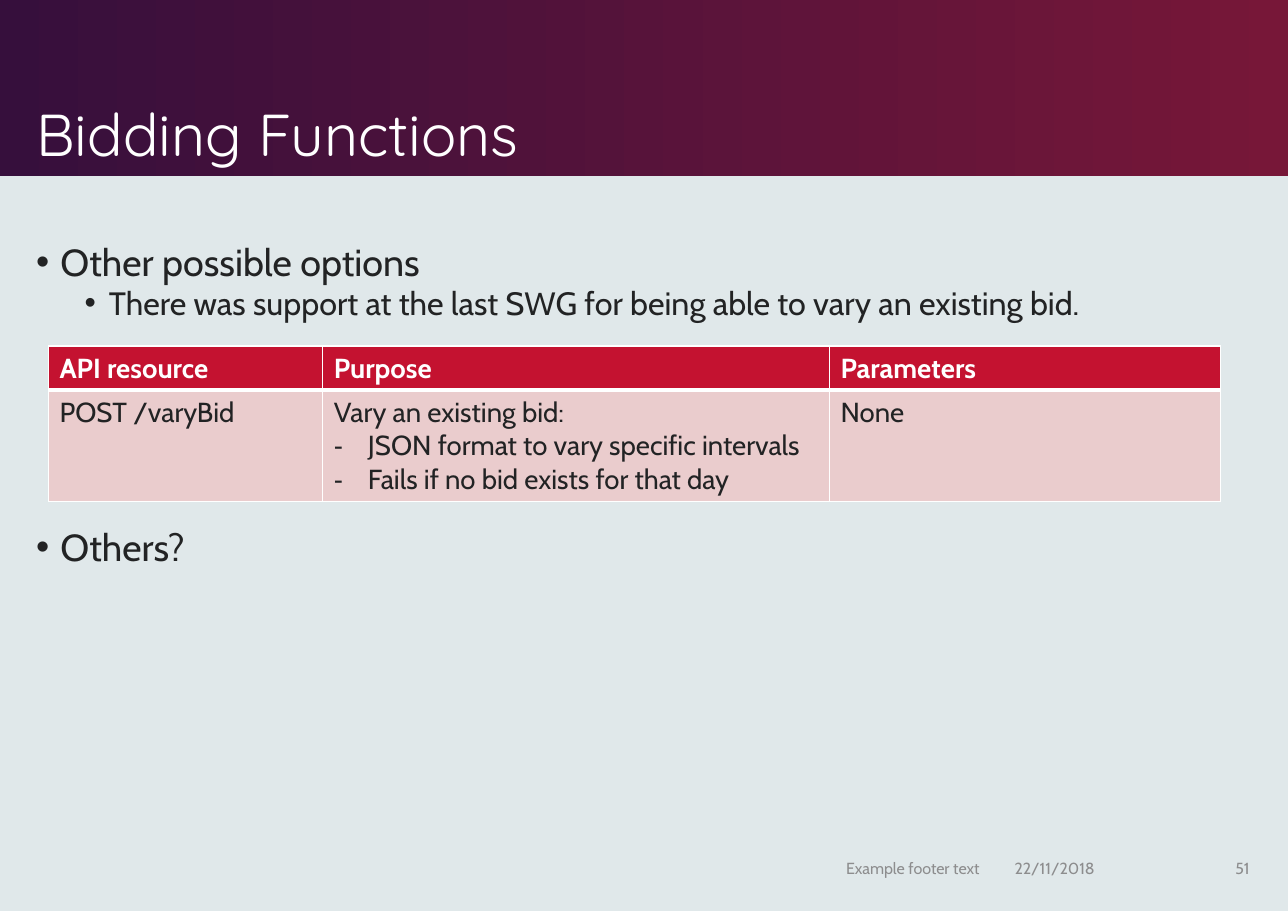
from dataclasses import dataclass

from lxml.etree import SubElement
from pptx import Presentation
from pptx.dml.color import RGBColor
from pptx.enum.shapes import MSO_SHAPE
from pptx.enum.text import MSO_ANCHOR, MSO_AUTO_SIZE, PP_ALIGN
from pptx.oxml.ns import qn
from pptx.util import Inches, Pt


@dataclass(frozen=True)
class Theme:
    background: str = "E0E8EA"
    band_start: str = "360F3C"
    band_end: str = "771738"
    ink: str = "222324"
    light: str = "FFFFFF"
    muted: str = "8D8D8E"
    header_fill: str = "C41230"
    row_fill: str = "EACCCD"
    heading_font: str = "Quicksand"
    body_font: str = "Cabin"
    title_size: float = 38.6
    point_size: float = 24.6
    detail_size: float = 21.1
    table_size: float = 18
    footer_size: float = 10.5


THEME = Theme()


def rgb(color):
    return RGBColor.from_string(color)


def add_span(para, text, size, color, font=THEME.body_font, bold=False):
    span = para.add_run()
    span.text = text
    span.font.size = Pt(size)
    span.font.name = font
    span.font.bold = bold
    span.font.color.rgb = rgb(color)


def set_bullet(para, mark, margin, hang):
    properties = para._p.get_or_add_pPr()
    properties.set("marL", str(Inches(margin)))
    properties.set("indent", str(-Inches(hang)))
    SubElement(properties, qn("a:buFont"), typeface="Arial")
    SubElement(properties, qn("a:buChar"), char=mark)


def add_text_frame(page, left, top, width, height):
    box = page.shapes.add_textbox(Inches(left), Inches(top), Inches(width), Inches(height))
    box.text_frame.word_wrap = True
    return box.text_frame


def add_heading(page, left, top, width, height, text):
    band = page.shapes.add_shape(MSO_SHAPE.RECTANGLE, Inches(left), Inches(top),
                                 Inches(width), Inches(height))
    band.shadow.inherit = False
    band.line.fill.background()
    band.fill.gradient()
    band.fill.gradient_angle = 0
    for stop, color in zip(band.fill.gradient_stops, (THEME.band_start, THEME.band_end)):
        stop.color.rgb = rgb(color)

    title = page.shapes.title
    title.element.addprevious(band.element)
    title.left, title.top = Inches(left + 0.23), Inches(top + 0.16)
    title.width, title.height = Inches(8.63), Inches(height - 0.17)
    frame = title.text_frame
    frame.word_wrap = True
    frame.auto_size = MSO_AUTO_SIZE.NONE
    frame.vertical_anchor = MSO_ANCHOR.BOTTOM
    para = frame.paragraphs[0]
    para.alignment = PP_ALIGN.LEFT
    para.line_spacing = 0.9
    add_span(para, text, THEME.title_size, THEME.light, THEME.heading_font)


def add_points(page, left, top, width, height, points):
    frame = add_text_frame(page, left, top, width, height)
    for index, (level, text) in enumerate(points):
        para = frame.paragraphs[0] if index == 0 else frame.add_paragraph()
        para.level = level
        para.line_spacing = 0.8
        if index:
            para.space_before = Pt(4.4 if level else 8.8)
        set_bullet(para, "•", 0.22 + 0.44 * level, 0.22)
        size = THEME.detail_size if level else THEME.point_size
        add_span(para, text, size, THEME.ink)


def set_borders(cell, widths):
    properties = cell._tc.get_or_add_tcPr()
    for side, width in zip(("lnL", "lnR", "lnT", "lnB"), widths):
        line = SubElement(properties, qn(f"a:{side}"), w=str(Pt(width)))
        fill = SubElement(line, qn("a:solidFill"))
        SubElement(fill, qn("a:srgbClr"), val=THEME.light)


def fill_cell(cell, lines, is_header):
    set_borders(cell, (1, 1, 1, 3) if is_header else (1, 1, 3, 1))
    cell.fill.solid()
    cell.fill.fore_color.rgb = rgb(THEME.header_fill if is_header else THEME.row_fill)
    color = THEME.light if is_header else THEME.ink
    frame = cell.text_frame
    for index, text in enumerate(lines):
        para = frame.paragraphs[0] if index == 0 else frame.add_paragraph()
        if index:
            set_bullet(para, "-", 0.31, 0.31)
        add_span(para, text, THEME.table_size, color, bold=is_header)


def add_resource_table(page, left, top, column_widths, row_heights, rows):
    table = page.shapes.add_table(len(rows), len(column_widths), Inches(left), Inches(top),
                                  Inches(sum(column_widths)), Inches(sum(row_heights))).table
    for column, width in zip(table.columns, column_widths):
        column.width = Inches(width)
    for row, height, contents in zip(table.rows, row_heights, rows):
        row.height = Inches(height)
        for cell, lines in zip(row.cells, contents):
            fill_cell(cell, lines, contents is rows[0])


def add_footer(page, top, height, items):
    for left, width, text, alignment in items:
        frame = add_text_frame(page, left, top, width, height)
        frame.vertical_anchor = MSO_ANCHOR.MIDDLE
        para = frame.paragraphs[0]
        para.alignment = alignment
        add_span(para, text, THEME.footer_size, THEME.muted)


def main():
    deck = Presentation()
    deck.slide_width, deck.slide_height = Inches(11.69), Inches(8.27)
    page = deck.slides.add_slide(deck.slide_layouts.get_by_name("Title Only"))
    page.background.fill.solid()
    page.background.fill.fore_color.rgb = rgb(THEME.background)

    add_heading(page, 0, 0, 11.69, 1.6, "Bidding Functions")
    add_points(page, 0.23, 2.2, 11.22, 0.85, [
        (0, "Other possible options"),
        (1, "There was support at the last SWG for being able to vary an existing bid."),
    ])
    add_resource_table(page, 0.44, 3.14, (2.49, 4.6, 3.55), (0.4, 1.01), [
        [["API resource"], ["Purpose"], ["Parameters"]],
        [["POST /varyBid"],
         ["Vary an existing bid:",
          "JSON format to vary specific intervals",
          "Fails if no bid exists for that day"],
         ["None"]],
    ])
    add_points(page, 0.23, 4.79, 11.22, 0.5, [(0, "Others?")])
    add_footer(page, 7.66, 0.44, [
        (3.87, 5.12, "Example footer text", PP_ALIGN.RIGHT),
        (9.11, 1.66, "22/11/2018", PP_ALIGN.LEFT),
        (10.89, 0.55, "51", PP_ALIGN.RIGHT),
    ])
    deck.save("out.pptx")


if __name__ == "__main__":
    main()
